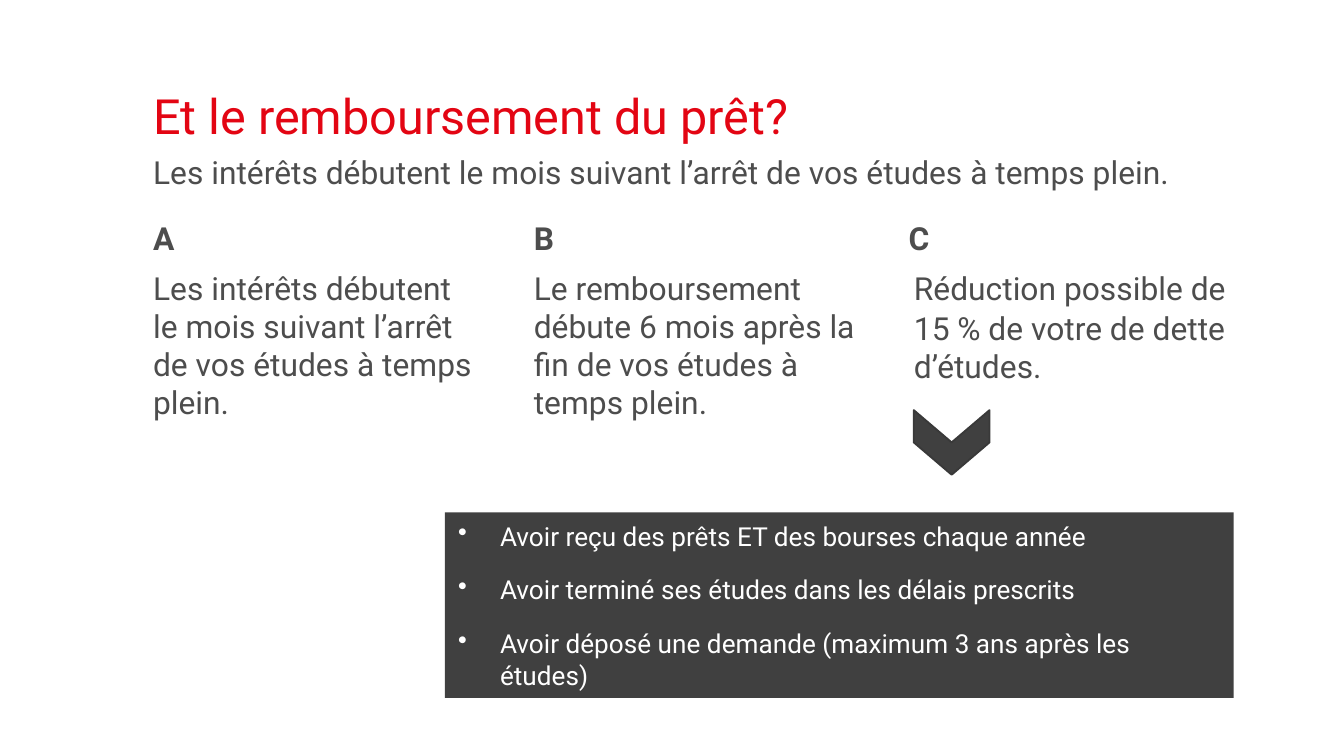
from dataclasses import dataclass

from lxml import etree
from pptx import Presentation
from pptx.dml.color import RGBColor
from pptx.enum.shapes import MSO_SHAPE
from pptx.enum.text import MSO_ANCHOR, MSO_AUTO_SIZE, PP_ALIGN
from pptx.oxml.ns import qn
from pptx.util import Pt

RECT, CHEVRON = MSO_SHAPE.RECTANGLE, MSO_SHAPE.CHEVRON
TOP, MIDDLE = MSO_ANCHOR.TOP, MSO_ANCHOR.MIDDLE
LEFT = PP_ALIGN.LEFT
NO_FIT = MSO_AUTO_SIZE.NONE


@dataclass(frozen=True)
class Theme:
    font: str = "Roboto"
    space_font: str = "Calibri"
    red: str = "E30513"
    text: str = "4D4D4D"
    panel: str = "404040"
    edge: str = "393939"
    white: str = "FFFFFF"
    title_size: int = 26
    body_size: int = 17
    space_size: int = 18
    list_size: int = 14


class SlideBuilder:
    def __init__(self, slide, theme):
        self.s = slide
        self.t = theme

    def run(self, p, text, size, color, bold=False, font=None):
        r = p.add_run()
        r.text = text
        r.font.name = font or self.t.font
        r.font.size = Pt(size)
        r.font.bold = bold
        r.font.color.rgb = RGBColor.from_string(color)

    def frame(self, sp, line_spacing, bottom=0):
        """Give a text holder zero insets and return its first paragraph."""
        tf = sp.text_frame
        tf.word_wrap = True
        tf.auto_size = NO_FIT
        tf.vertical_anchor = TOP
        tf.margin_left = tf.margin_top = tf.margin_right = 0
        tf.margin_bottom = Pt(bottom)
        p = tf.paragraphs[0]
        p.alignment = LEFT
        p.line_spacing = line_spacing
        p.space_before = Pt(0)
        return p

    def bullet(self, p, char, indent):
        """Set a bullet with a hanging indent, or none if char is empty."""
        props = p._p.get_or_add_pPr()
        props.set("marL", str(Pt(indent)))
        props.set("indent", str(-Pt(indent)))
        if char:
            etree.SubElement(props, qn("a:buChar"), char=char)
        else:
            etree.SubElement(props, qn("a:buNone"))

    def placeholder(self, sp, box, text, size, color):
        sp.left, sp.top, sp.width, sp.height = map(Pt, box)
        p = self.frame(sp, 0.9)
        self.bullet(p, "", 0)
        self.run(p, text, size, color)

    def text(self, box, runs, line_spacing=1.0, bottom=0):
        sp = self.s.shapes.add_textbox(*map(Pt, box))
        p = self.frame(sp, line_spacing, bottom)
        for text, style in runs:
            self.run(p, text, **{"size": self.t.body_size, "color": self.t.text, **style})

    def shape(self, kind, box, fill, line=None, rotation=0):
        sp = self.s.shapes.add_shape(kind, *map(Pt, box))
        sp.shadow.inherit = False
        sp.rotation = rotation
        sp.fill.solid()
        sp.fill.fore_color.rgb = RGBColor.from_string(fill)
        if line:
            sp.line.color.rgb = RGBColor.from_string(line)
            sp.line.width = Pt(1)
        else:
            sp.line.fill.background()
        return sp

    def bullet_panel(self, box, items):
        tf = self.shape(RECT, box, self.t.panel).text_frame
        tf.word_wrap = True
        tf.vertical_anchor = MIDDLE
        for i, item in enumerate(items):
            p = tf.add_paragraph() if i else tf.paragraphs[0]
            p.alignment = LEFT
            p.space_before = p.space_after = Pt(6)
            self.bullet(p, "•", 22.5)
            self.run(p, item, self.t.list_size, self.t.white)


def main():
    prs = Presentation()
    prs.slide_width, prs.slide_height = Pt(720), Pt(405)
    s = prs.slides.add_slide(prs.slide_layouts[1])
    theme = Theme()
    b = SlideBuilder(s, theme)
    margin, full_width, column_width = 82, 577.5, 173

    # Title and introduction
    interest = "Les intérêts débutent le mois suivant l’arrêt de vos études à temps plein."
    b.placeholder(s.shapes.title, (margin, 49.7, full_width, 29.5),
                  "Et le remboursement du prêt?", theme.title_size, theme.red)
    b.placeholder(s.placeholders[1], (margin, 84.2, full_width, 29.5),
                  interest, theme.body_size, theme.text)

    # Three lettered columns: letter, letter left, text left, text runs
    no_break = {"size": theme.space_size, "bold": True, "font": theme.space_font}
    columns = [
        ("A", margin, margin, [(interest, {})]),
        ("B", 286, 286, [("Le remboursement débute 6 mois après la fin de vos études "
                          "à temps plein.", {})]),
        ("C", 486.7, 489.6, [("Réduction possible de 15", {}), (" ", no_break),
                             ("% de votre de dette d’études.", {})]),
    ]
    for letter, letter_left, text_left, runs in columns:
        b.text((letter_left, 119.5, column_width, 21.6), [(letter, {"bold": True})], 0.9)
        b.text((text_left, 144, column_width, 170), runs, bottom=3.6)

    # Conditions for the reduction
    b.bullet_panel((238.3, 274.5, 422.6, 99.4), [
        "Avoir reçu des prêts ET des bourses chaque année",
        "Avoir terminé ses études dans les délais prescrits",
        "Avoir déposé une demande (maximum 3 ans après les études)",
    ])
    b.shape(CHEVRON, (492.5, 216.7, 34.6, 40.6), theme.panel, theme.edge, rotation=90)

    prs.save("out.pptx")


if __name__ == "__main__":
    main()
